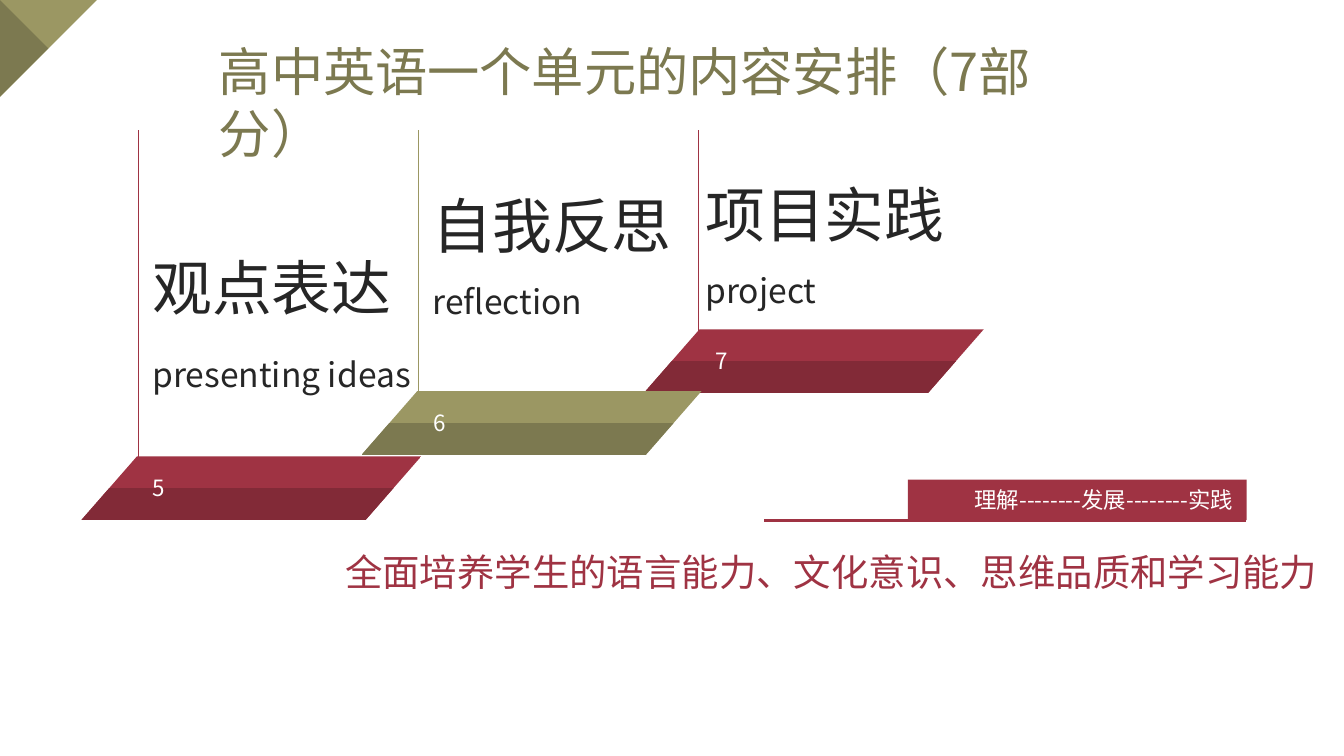
from copy import deepcopy

from lxml import etree
from pptx import Presentation
from pptx import util as u
from pptx.dml.color import RGBColor
from pptx.enum import shapes, text
from pptx.oxml.ns import qn

PX = 4572  # EMU per px, 200 px to the inch
FONT = "Noto Sans CJK SC"
COLORS = {
    "red": "9F3343", "dark_red": "822A37",
    "olive": "9B9763", "dark_olive": "7C7950",
    "ink": "262626", "white": "FFFFFF",
}


def rgb(name):
    return RGBColor.from_string(COLORS[name])


def emu(*px):
    return [u.Emu(v * PX) for v in px]


def paint(sp, color):
    sp.shadow.inherit = False
    sp.fill.solid()
    sp.fill.fore_color.rgb = rgb(color)
    sp.line.fill.background()


def style_run(r, size, color):
    r.font.size = u.Pt(size)
    r.font.color.rgb = rgb(color)
    r.font.name = FONT
    etree.SubElement(r.font._element, qn("a:ea")).set("typeface", FONT)


def add_label(s, box, content, size, color, wrap=True):
    tf = s.shapes.add_textbox(*emu(*box)).text_frame
    tf.word_wrap = wrap
    p = tf.paragraphs[0]
    p.text = content
    style_run(p.runs[0], size, color)
    return p


def add_rule(s, start, end, color, width):
    line = s.shapes.add_connector(
        shapes.MSO_CONNECTOR.STRAIGHT, *emu(*start, *end))
    line.line.color.rgb = rgb(color)
    line.line.width = u.Pt(width)
    etree.SubElement(line._element.spPr, qn("a:effectLst"))


def add_polygon(s, points):
    builder = s.shapes.build_freeform(*points[0], scale=PX)
    builder.add_line_segments(points[1:], close=True)
    return builder.convert_to_shape()


def split_fill(sp, upper, lower):
    """Fill with two flat halves, one above the other."""
    sp.fill.gradient()
    stops = sp._element.spPr.find(qn("a:gradFill")).find(qn("a:gsLst"))
    for stop in list(stops):
        stops.append(deepcopy(stop))
    halves = [(0, upper), (0.5, upper), (0.5, lower), (1, lower)]
    for stop, (position, color) in zip(sp.fill.gradient_stops, halves):
        stop.position = position
        stop.color.rgb = rgb(color)
    sp.fill.gradient_angle = 270


def add_corner(s, x, y, size):
    half = size // 2
    corner = s.shapes.add_shape(
        shapes.MSO_SHAPE.RIGHT_TRIANGLE, *emu(x, y, size, size))
    corner.rotation = 90
    paint(corner, "olive")
    paint(add_polygon(s, [(x, y), (x + half, y + half), (x, y + size)]),
          "dark_olive")


def add_step(s, x, y, number, color):
    """Slanted band with its number."""
    w, h, slant = 506, 95, 83
    band = add_polygon(s, [(x + slant, y), (x + w, y),
                           (x + w - slant, y + h), (x, y + h)])
    paint(band, color)
    split_fill(band, color, "dark_" + color)
    add_label(s, (x + 87, y + 17, 60, 60), number, 12, "white", wrap=False)


def add_caption(s, box, title, subtitle, own_paragraph):
    """Subtitle either starts a paragraph or wraps below the title."""
    p = add_label(s, box, title, 32, "ink")
    p.line_spacing = 1.5
    if own_paragraph:
        p = s.shapes[-1].text_frame.add_paragraph()
        p.line_spacing = 1.5
        p.space_before = u.Pt(6)
    r = p.add_run()
    r.text = subtitle
    style_run(r, 18, "ink")


def add_badge(s, x, y, w, h, content):
    base = y + h + 1
    add_rule(s, (x - 214, base), (x + w - 1, base), "red", 1.5)
    sp = s.shapes.add_shape(shapes.MSO_SHAPE.RECTANGLE, *emu(x, y, w, h))
    paint(sp, "red")
    tf = sp.text_frame
    tf.word_wrap = True
    tf.vertical_anchor = text.MSO_ANCHOR.MIDDLE
    p = tf.paragraphs[0]
    p.text = content
    p.alignment = text.PP_ALIGN.RIGHT
    style_run(p.runs[0], 12, "white")


def main():
    prs = Presentation()
    prs.slide_width, prs.slide_height = emu(2000, 1125)
    s = prs.slides.add_slide(prs.slide_layouts[6])

    add_corner(s, 0, 0, 144)
    add_step(s, 121, 679, "5", "red")
    add_step(s, 958, 490, "7", "red")

    add_caption(s, (207, 310, 454, 290), "观点表达", "presenting ideas", True)
    rules = [(682, "red"), (594, "olive"), (500, "red")]
    for i, (bottom, color) in enumerate(rules):
        x = 206 + 417 * i
        add_rule(s, (x, bottom), (x, 194), color, 0.5)
    add_caption(s, (624, 218, 422, 272), "自我反思", "reflection", False)
    add_caption(s, (1030, 202, 482, 272), "项目实践", "project", False)

    p = add_label(s, (494, 774, 1512, 120),
                  "全面培养学生的语言能力、文化意识、思维品质和学习能力",
                  20, "red")
    p.alignment = text.PP_ALIGN.JUSTIFY
    p.line_spacing = 1.5
    add_badge(s, 1351, 714, 504, 60, "理解--------发展--------实践")
    add_label(s, (306, 48, 1384, 114), "高中英语一个单元的内容安排（7部分）",
              28, "dark_olive")
    add_step(s, 538, 582, "6", "olive")

    prs.save("out.pptx")


if __name__ == "__main__":
    main()
